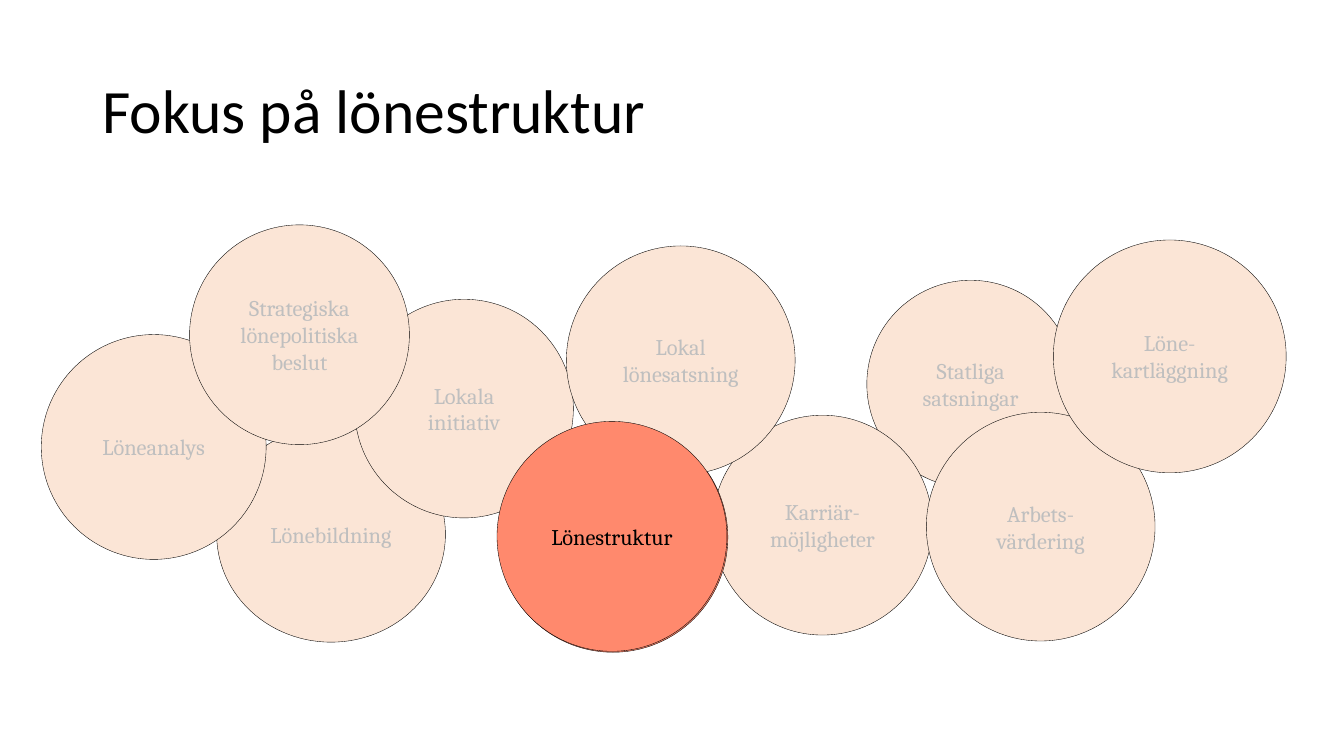
"""Build a slide of overlapping pay topics with the pay structure in focus."""
from pptx import Presentation
from pptx.dml.color import RGBColor
from pptx.enum.shapes import MSO_SHAPE as Shape
from pptx.enum.text import MSO_ANCHOR as Anchor, PP_ALIGN as Align
from pptx.util import Pt

BLACK = RGBColor(0x00, 0x00, 0x00)
GREY = RGBColor(0xBF, 0xBF, 0xBF)
PEACH = RGBColor(0xFB, 0xE5, 0xD6)
CORAL = RGBColor(0xFF, 0x89, 0x6D)

FOCUS = "Lönestruktur"
TOPICS = [
    ("Lönebildning", 154.8, 304.6, 163.4, 154.1),
    ("Statliga satsningar", 619.2, 200.2, 148.3, 148.3),
    ("Karriär-möjligheter", 509, 296.6, 157, 157),
    ("Lokala initiativ", 253.4, 213.8, 156.2, 156.2),
    (FOCUS, 355.7, 301.7, 164.2, 164.2),
    ("Löneanalys", 29.5, 239, 160.6, 160.6),
    ("Lokal\nlönesatsning", 404.6, 175.7, 163.4, 163.4),
    ("Arbets-värdering", 661.7, 294.5, 163.4, 163.4),
    ("Löne-kartläggning", 752.4, 171.4, 166.3, 166.3),
    ("Strategiska lönepolitiska beslut", 135.4, 160.6, 157, 157),
    (FOCUS, 355, 301, 164.2, 164.2),
]


def write_text(box, text, font, size, color, align, spacing=1.0):
    """Fill a shape with one formatted paragraph per line of text."""
    frame = box.text_frame
    frame.word_wrap = True
    frame.vertical_anchor = Anchor.MIDDLE
    for index, line in enumerate(text.split("\n")):
        para = frame.add_paragraph() if index else frame.paragraphs[0]
        para.alignment = align
        para.line_spacing = spacing
        span = para.add_run()
        span.text = line
        span.font.name = font
        span.font.size = Pt(size)
        span.font.color.rgb = color


class SlideBuilder:
    """Hold the style and the current slide."""

    title_font, title_size = "Calibri", 44
    topic_font, topic_size = "Cambria", 16
    outline = 0.25

    def __init__(self, page):
        """Keep the slide to draw on."""
        self.page = page

    def title(self, text, left, top, width, height):
        """Add the heading."""
        box = self.page.shapes.add_textbox(Pt(left), Pt(top), Pt(width), Pt(height))
        write_text(box, text, font=self.title_font, size=self.title_size,
                   color=BLACK, align=Align.LEFT, spacing=0.9)

    def circle(self, text, left, top, width, height, focused=False):
        """Add one topic circle, bright when it is in focus."""
        circle = self.page.shapes.add_shape(
            Shape.OVAL, Pt(left), Pt(top), Pt(width), Pt(height))
        circle.shadow.inherit = False
        circle.fill.solid()
        circle.fill.fore_color.rgb = CORAL if focused else PEACH
        circle.line.color.rgb = BLACK
        circle.line.width = Pt(self.outline)
        write_text(circle, text, font=self.topic_font, size=self.topic_size,
                   color=BLACK if focused else GREY, align=Align.CENTER)


def main():
    """Create and save the deck."""
    deck = Presentation()
    deck.slide_width, deck.slide_height = Pt(960), Pt(540)
    builder = SlideBuilder(deck.slides.add_slide(deck.slide_layouts[6]))
    builder.title("Fokus på lönestruktur", 66, 28.75, 828, 104.4)
    for text, *place in TOPICS:
        builder.circle(text, *place, focused=text == FOCUS)
    deck.save("out.pptx")


if __name__ == "__main__":
    main()
